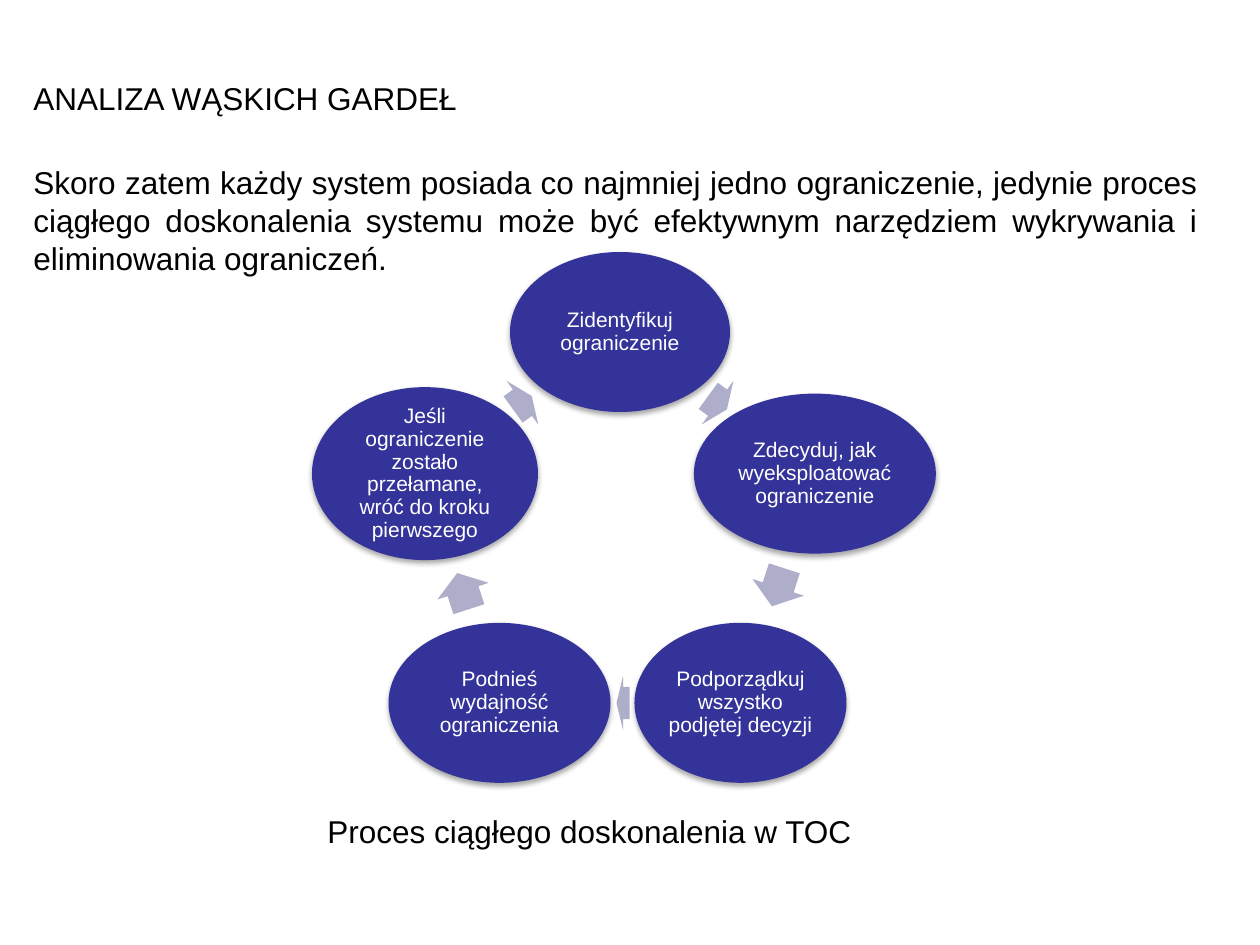
import math

from lxml import etree
from pptx import Presentation
from pptx import util as u
from pptx.dml.color import RGBColor
from pptx.enum import shapes, text
from pptx.oxml.ns import qn

EMU_PER_PX = 914400 / 126
BLACK = RGBColor(0x00, 0x00, 0x00)
WHITE = RGBColor(0xFF, 0xFF, 0xFF)
NAVY = RGBColor(0x33, 0x33, 0x99)
LAVENDER = RGBColor(0xAE, 0xAE, 0xCA)
FONT = "Arial"

# Cycle geometry
CENTER_X, CENTER_Y, RADIUS = 620, 537, 205
ARROW_RADIUS = 166
ARROW_HEIGHT = 54

# Step text, ellipse width and height, length of the arrow that follows,
# and the shift of that arrow along its direction
STEPS = [
    ("Zidentyfikuj ograniczenie", 220, 160, 23, 0),
    ("Zdecyduj, jak wyeksploatować ograniczenie", 242, 160, 40, -1),
    ("Podporządkuj wszystko podjętej decyzji", 212, 160, 13, -3),
    ("Podnieś wydajność ograniczenia", 222, 160, 38, -3),
    ("Jeśli ograniczenie zostało przełamane, wróć do kroku pierwszego",
     226, 173, 23, 0),
]


def px(value):
    return u.Emu(round(value * EMU_PER_PX))


def format_text(para, size, color, align):
    para.alignment = align
    for span in para.runs:
        span.font.name = FONT
        span.font.size = u.Pt(size)
        span.font.color.rgb = color


def add_text(page, content, left, top, width, height, align=text.PP_ALIGN.LEFT):
    box = page.shapes.add_textbox(px(left), px(top), px(width), px(height))
    frame = box.text_frame
    frame.word_wrap = True
    frame.text = content
    format_text(frame.paragraphs[0], 18, BLACK, align)


def add_centered_shape(page, kind, x, y, width, height, color):
    shape = page.shapes.add_shape(kind, px(x - width / 2), px(y - height / 2),
                                  px(width), px(height))
    shape.shadow.inherit = False
    shape.fill.solid()
    shape.fill.fore_color.rgb = color
    shape.line.fill.background()
    return shape


def add_soft_shadow(shape):
    effects = shape._element.spPr.find(qn("a:effectLst"))
    shadow = etree.SubElement(effects, qn("a:outerShdw"), blurRad=str(u.Pt(3.1)),
                              dist=str(u.Pt(1.8)), dir="5400000", rotWithShape="0")
    color = etree.SubElement(shadow, qn("a:srgbClr"), val=str(BLACK))
    etree.SubElement(color, qn("a:alpha"), val="35000")


def point_on_circle(angle, radius):
    turn = math.radians(angle)
    return CENTER_X + radius * math.sin(turn), CENTER_Y - radius * math.cos(turn)


def add_step(page, content, angle, width, height):
    x, y = point_on_circle(angle, RADIUS)
    ellipse = add_centered_shape(page, shapes.MSO_SHAPE.OVAL, x, y, width, height, NAVY)
    add_soft_shadow(ellipse)
    frame = ellipse.text_frame
    frame.word_wrap = True
    frame.vertical_anchor = text.MSO_ANCHOR.MIDDLE
    frame.margin_left = frame.margin_right = u.Inches(0.02)
    frame.margin_top = frame.margin_bottom = u.Inches(0.02)
    frame.text = content
    para = frame.paragraphs[0]
    para.line_spacing = 0.9
    format_text(para, 12, WHITE, text.PP_ALIGN.CENTER)


def add_arrow(page, angle, length, shift):
    x, y = point_on_circle(angle, ARROW_RADIUS)
    turn = math.radians(angle)
    arrow = add_centered_shape(page, shapes.MSO_SHAPE.RIGHT_ARROW,
                               x + shift * math.cos(turn), y + shift * math.sin(turn),
                               length, ARROW_HEIGHT, LAVENDER)
    arrow.adjustments[0] = 0.6
    arrow.adjustments[1] = 0.5
    arrow.rotation = angle


def add_cycle(page):
    sector = 360 / len(STEPS)
    for index, (content, width, height, length, shift) in enumerate(STEPS):
        add_step(page, content, index * sector, width, height)
        add_arrow(page, (index + 0.5) * sector, length, shift)


def main():
    deck = Presentation()
    deck.slide_width, deck.slide_height = px(1260), px(945)
    page = deck.slides.add_slide(deck.slide_layouts[6])

    # Heading and introduction
    add_text(page, "ANALIZA WĄSKICH GARDEŁ", 21, 73, 987, 50)
    add_text(page, "Skoro zatem każdy system posiada co najmniej jedno ograniczenie, "
             "jedynie proces ciągłego doskonalenia systemu może być efektywnym "
             "narzędziem wykrywania i eliminowania ograniczeń.",
             21, 157, 1189, 127, text.PP_ALIGN.JUSTIFY)

    # Improvement cycle with its caption
    add_cycle(page)
    add_text(page, "Proces ciągłego doskonalenia w TOC", 315, 806, 588, 50)

    deck.save("out.pptx")


if __name__ == "__main__":
    main()
